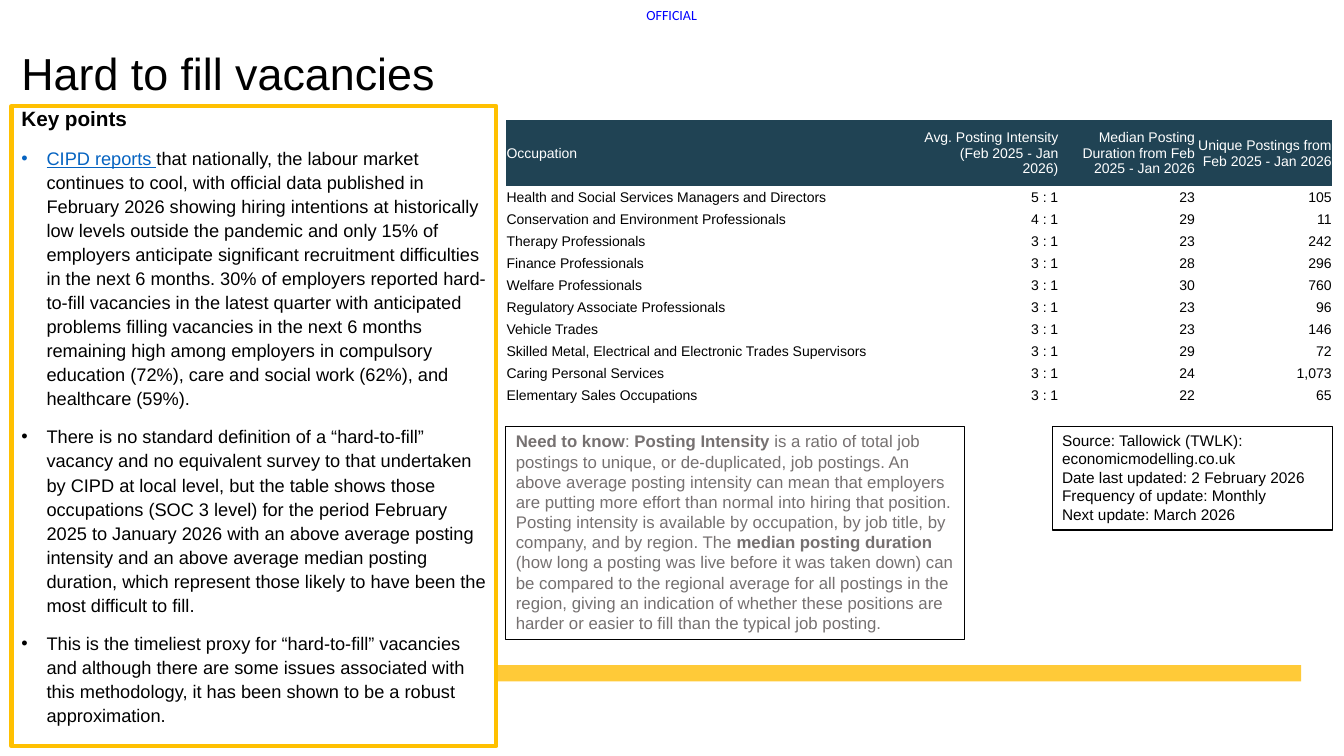
import pptx
import pptx.dml.color
import pptx.enum.shapes
import pptx.enum.text
import pptx.oxml.ns
import pptx.util
from lxml import etree

Pt = pptx.util.Pt
RGBColor = pptx.dml.color.RGBColor
Align = pptx.enum.text.PP_ALIGN
Anchor = pptx.enum.text.MSO_ANCHOR
qn = pptx.oxml.ns.qn

BLACK = RGBColor(0x00, 0x00, 0x00)
WHITE = RGBColor(0xFF, 0xFF, 0xFF)
GREY = RGBColor(0x76, 0x71, 0x71)
MARKING_BLUE = RGBColor(0x00, 0x00, 0xFF)
LINK_BLUE = RGBColor(0x05, 0x63, 0xC1)
GOLD = RGBColor(0xFF, 0xC0, 0x00)
BAR_YELLOW = RGBColor(0xFF, 0xCA, 0x38)
HEADER_TEAL = RGBColor(0x20, 0x43, 0x54)

PLAIN_TABLE_STYLE = "{2D5ABB26-0587-4C30-8999-92F81FD0307C}"
COLUMN_WIDTHS = [297.4, 97.6, 97.6, 97.6]
HEADER_HEIGHT = 47.3
ROW_HEIGHT = 15.75

HEADINGS = [
    "Occupation",
    "Avg. Posting Intensity (Feb 2025 - Jan 2026)",
    "Median Posting Duration from Feb 2025 - Jan 2026",
    "Unique Postings from Feb 2025 - Jan 2026",
]
OCCUPATIONS = [
    ("Health and Social Services Managers and Directors", "5 : 1", "23", "105"),
    ("Conservation and Environment Professionals", "4 : 1", "29", "11"),
    ("Therapy Professionals", "3 : 1", "23", "242"),
    ("Finance Professionals", "3 : 1", "28", "296"),
    ("Welfare Professionals", "3 : 1", "30", "760"),
    ("Regulatory Associate Professionals", "3 : 1", "23", "96"),
    ("Vehicle Trades", "3 : 1", "23", "146"),
    ("Skilled Metal, Electrical and Electronic Trades Supervisors", "3 : 1", "29", "72"),
    ("Caring Personal Services", "3 : 1", "24", "1,073"),
    ("Elementary Sales Occupations", "3 : 1", "22", "65"),
]
KEY_POINTS = [
    [
        ("CIPD reports ", {"color": LINK_BLUE, "underline": True}),
        "that nationally, the labour market continues to cool, with official data published in "
        "February 2026 showing hiring intentions at historically low levels outside the pandemic "
        "and only 15% of employers anticipate significant recruitment difficulties in the next 6 "
        "months. 30% of employers reported hard-to-fill vacancies in the latest quarter with "
        "anticipated problems filling vacancies in the next 6 months remaining high among "
        "employers in compulsory education (72%), care and social work (62%), and healthcare (59%).",
    ],
    [
        "There is no standard definition of a “hard-to-fill” vacancy and no equivalent survey to "
        "that undertaken by CIPD at local level, but the table shows those occupations (SOC 3 "
        "level) for the period February 2025 to January 2026 with an above average posting "
        "intensity and an above average median posting duration, which represent those likely "
        "to have been the most difficult to fill.",
    ],
    [
        "This is the timeliest proxy for “hard-to-fill” vacancies and although there are some "
        "issues associated with this methodology, it has been shown to be a robust approximation.",
    ],
]
SOURCE_LINES = [
    "Source: Tallowick (TWLK): economicmodelling.co.uk",
    "Date last updated: 2 February 2026",
    "Frequency of update: Monthly",
    "Next update: March 2026",
]
NEED_TO_KNOW = [
    ("Need to know", {"bold": True}),
    ": ",
    ("Posting Intensity ", {"bold": True}),
    "is a ratio of total job postings to unique, or de-duplicated, job postings. An above "
    "average posting intensity can mean that employers are putting more effort than normal into "
    "hiring that position. Posting intensity is available by occupation, by job title, by "
    "company, and by region. The ",
    ("median posting duration ", {"bold": True}),
    "(how long a posting was live before it was taken down) can be compared to the regional "
    "average for all postings in the region, giving an indication of whether these positions "
    "are harder or easier to fill than the typical job posting.",
]


def add_run(paragraph, text, size, color=BLACK, font="Arial", bold=False, underline=False):
    run = paragraph.add_run()
    run.text = text
    run.font.size = Pt(size)
    run.font.color.rgb = color
    run.font.name = font
    run.font.bold = bold
    run.font.underline = underline


def add_bullet(paragraph):
    properties = paragraph._p.get_or_add_pPr()
    properties.set("marL", str(Pt(18)))
    properties.set("indent", str(-Pt(18)))
    etree.SubElement(properties, qn("a:buFont"), typeface="Arial")
    etree.SubElement(properties, qn("a:buChar"), char="•")


def write_text(frame, pieces, align=Align.LEFT, spacing=1.0, before=0, bullet=False, **style):
    paragraph = frame.paragraphs[0]
    if paragraph.runs:
        paragraph = frame.add_paragraph()
    if bullet:
        add_bullet(paragraph)
    paragraph.alignment = align
    paragraph.line_spacing = spacing
    paragraph.space_before = Pt(before)
    for piece in pieces:
        text, changes = (piece, {}) if isinstance(piece, str) else piece
        add_run(paragraph, text, **{**style, **changes})


def add_box(slide, left, top, width, height, outline=None, weight=0.75, anchor=Anchor.TOP):
    box = slide.shapes.add_textbox(Pt(left), Pt(top), Pt(width), Pt(height))
    if outline is not None:
        box.fill.solid()
        box.fill.fore_color.rgb = WHITE
        box.line.color.rgb = outline
        box.line.width = Pt(weight)
    box.text_frame.word_wrap = True
    box.text_frame.vertical_anchor = anchor
    return box.text_frame


def add_bar(slide, left, top, width, height, color):
    bar = slide.shapes.add_shape(
        pptx.enum.shapes.MSO_SHAPE.RECTANGLE, Pt(left), Pt(top), Pt(width), Pt(height))
    bar.shadow.inherit = False
    bar.fill.solid()
    bar.fill.fore_color.rgb = color
    bar.line.fill.background()


def add_occupation_table(slide, left, top):
    rows = [HEADINGS, *OCCUPATIONS]
    height = HEADER_HEIGHT + ROW_HEIGHT * len(OCCUPATIONS)
    frame = slide.shapes.add_table(
        len(rows), len(HEADINGS), Pt(left), Pt(top), Pt(sum(COLUMN_WIDTHS)), Pt(height))
    for style_id in frame.element.iter(qn("a:tableStyleId")):
        style_id.text = PLAIN_TABLE_STYLE
    table = frame.table
    table.horz_banding = False
    for column, width in zip(table.columns, COLUMN_WIDTHS):
        column.width = Pt(width)
    for r, values in enumerate(rows):
        is_header = r == 0
        table.rows[r].height = Pt(HEADER_HEIGHT if is_header else ROW_HEIGHT)
        for c, value in enumerate(values):
            cell = table.cell(r, c)
            cell.margin_left = cell.margin_right = cell.margin_top = Pt(0.5)
            cell.margin_bottom = Pt(0)
            cell.vertical_anchor = Anchor.MIDDLE
            if is_header:
                cell.fill.solid()
                cell.fill.fore_color.rgb = HEADER_TEAL
            else:
                cell.fill.background()
            write_text(cell.text_frame, [value], size=10, color=WHITE if is_header else BLACK,
                       align=Align.RIGHT if c else Align.LEFT)


def main():
    deck = pptx.Presentation()
    deck.slide_width, deck.slide_height = Pt(960), Pt(540)
    slide = deck.slides.add_slide(deck.slide_layouts[6])

    add_bar(slide, 22.3, 475.2, 907.2, 11.5, BAR_YELLOW)

    marking = add_box(slide, 461.8, 5, 38.2, 12.2)
    marking.margin_left = marking.margin_right = marking.margin_top = marking.margin_bottom = 0
    marking.word_wrap = False
    write_text(marking, ["OFFICIAL"], size=10, font="Calibri", color=MARKING_BLUE)

    title = add_box(slide, 8.2, 23, 907.2, 62.6, anchor=Anchor.MIDDLE)
    write_text(title, ["Hard to fill vacancies"], size=32, spacing=0.9)

    key_points = add_box(slide, 8.2, 75.8, 346.3, 457.2, outline=GOLD, weight=3)
    write_text(key_points, ["Key points"], size=14.8, bold=True, spacing=0.8)
    for point in KEY_POINTS:
        write_text(key_points, point, size=13, spacing=1.1, before=10, bullet=True)

    add_occupation_table(slide, 361.4, 85.7)

    source = add_box(slide, 751.5, 304.4, 200.2, 74.2, outline=BLACK)
    for line in SOURCE_LINES:
        write_text(source, [line], size=11)

    need_to_know = add_box(slide, 361.4, 304.4, 327.6, 152.6, outline=BLACK)
    write_text(need_to_know, NEED_TO_KNOW, size=12, color=GREY)

    deck.save("out.pptx")


if __name__ == "__main__":
    main()
